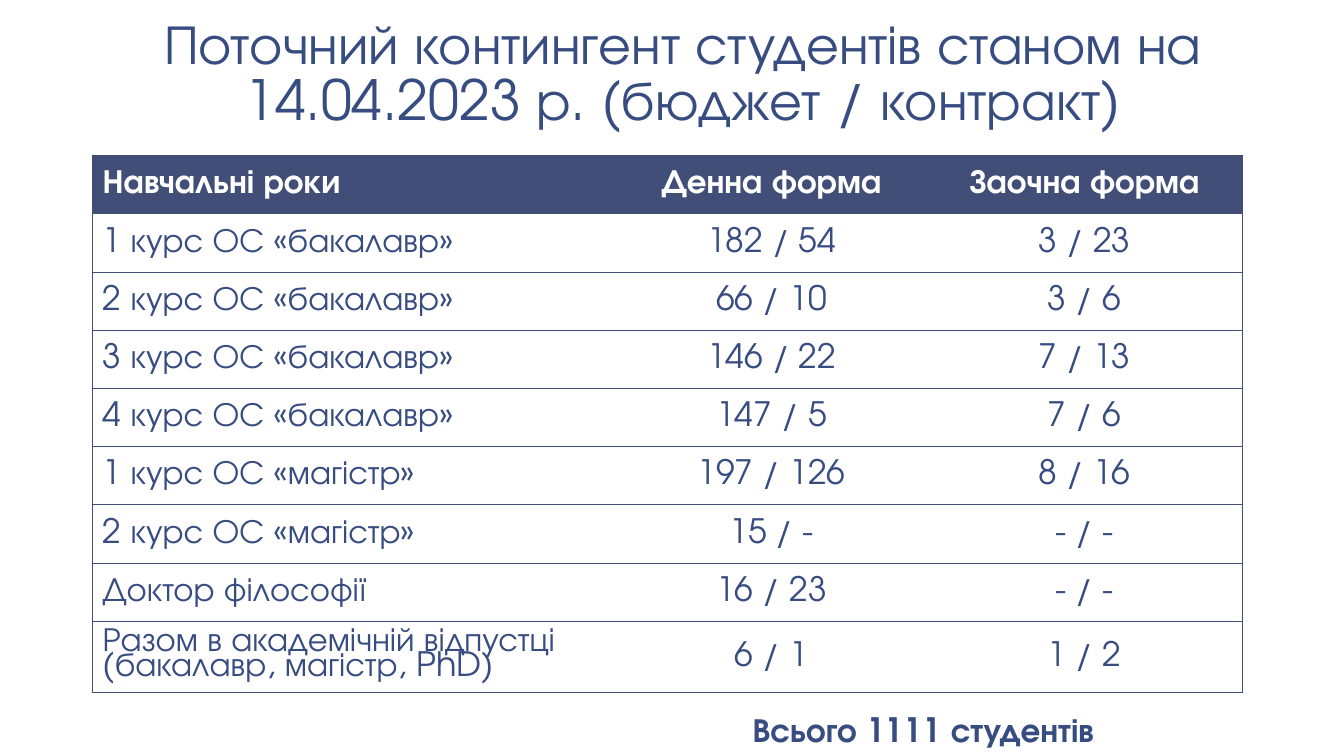
from dataclasses import dataclass

from lxml import etree
from pptx import Presentation
from pptx.dml.color import RGBColor
from pptx.enum.text import MSO_ANCHOR, MSO_AUTO_SIZE, PP_ALIGN
from pptx.oxml.ns import qn
from pptx.util import Pt

LEFT, CENTER = PP_ALIGN.LEFT, PP_ALIGN.CENTER
MIDDLE, BOTTOM = MSO_ANCHOR.MIDDLE, MSO_ANCHOR.BOTTOM
FIXED, GROW = MSO_AUTO_SIZE.NONE, MSO_AUTO_SIZE.SHAPE_TO_FIT_TEXT


@dataclass(frozen=True)
class Theme:
    """Colours, font and type sizes of the slide."""
    font: str = "TeX Gyre Adventor"
    ink: str = "374C81"
    head: str = "414E77"
    white: str = "FFFFFF"
    title: float = 39.6
    body: float = 24
    rule: float = 0.5


THEME = Theme()
TITLE = "Поточний контингент студентів станом на 14.04.2023 р. (бюджет / контракт)"
TOTAL = "Всього 1111 студентів"
ROWS = [
    ("Навчальні роки", "Денна форма", "Заочна форма"),
    ("1 курс ОС «бакалавр»", "182 / 54", "3 / 23"),
    ("2 курс ОС «бакалавр»", "66 / 10", "3 / 6"),
    ("3 курс ОС «бакалавр»", "146 / 22", "7 / 13"),
    ("4 курс ОС «бакалавр»", "147 / 5", "7 / 6"),
    ("1 курс ОС «магістр»", "197 / 126", "8 / 16"),
    ("2 курс ОС «магістр»", "15 / -", "- / -"),
    ("Доктор філософії", "16 / 23", "- / -"),
    ("Разом в академічній відпустці (бакалавр, магістр, PhD)", "6 / 1", "1 / 2"),
]
COLS = (374.4, 221, 226.1)
ROW, LAST = 41.6, 51


def write(frame, text, size, color, bold=False, align=LEFT, lead=None):
    """Put one styled run in the first paragraph of a frame."""
    para = frame.paragraphs[0]
    para.alignment = align
    if lead:
        para.line_spacing = lead
    run = para.add_run()
    run.text = text
    font = run.font
    font.name, font.size, font.bold = THEME.font, Pt(size), bold
    font.color.rgb = RGBColor.from_string(color)


def edge(cell, side, shown):
    """Draw or clear one border of a cell."""
    line = etree.SubElement(cell._tc.get_or_add_tcPr(), qn(f"a:ln{side}"))
    line.set("w", str(Pt(THEME.rule)))
    if shown:
        fill = etree.SubElement(line, qn("a:solidFill"))
        etree.SubElement(fill, qn("a:srgbClr")).set("val", THEME.head)
    else:
        etree.SubElement(line, qn("a:noFill"))


def add_title(slide, x, y, w, h):
    """Place the slide title in its placeholder."""
    title = slide.shapes.title
    title.left, title.top, title.width, title.height = map(Pt, (x, y, w, h))
    frame = title.text_frame
    frame.auto_size, frame.word_wrap = FIXED, True
    frame.vertical_anchor = BOTTOM
    frame.margin_left = frame.margin_right = Pt(9.4)
    frame.margin_top = frame.margin_bottom = Pt(5)
    write(frame, TITLE, THEME.title, THEME.ink, align=CENTER, lead=0.85)


def add_grid(slide, x, y):
    """Place the table of student counts."""
    high = ROW * (len(ROWS) - 1) + LAST
    grid = slide.shapes.add_table(
        len(ROWS), len(COLS), Pt(x), Pt(y), Pt(sum(COLS)), Pt(high)).table
    grid.first_row = grid.horz_banding = False
    for col, wide in zip(grid.columns, COLS):
        col.width = Pt(wide)
    for r, row in enumerate(ROWS):
        head, last = r == 0, r == len(ROWS) - 1
        grid.rows[r].height = Pt(LAST if last else ROW)
        for c, text in enumerate(row):
            cell = grid.cell(r, c)
            cell.vertical_anchor = MIDDLE
            edge(cell, "L", c == 0)
            edge(cell, "R", c == len(COLS) - 1)
            edge(cell, "T", True)
            edge(cell, "B", True)
            if head:
                cell.fill.solid()
                cell.fill.fore_color.rgb = RGBColor.from_string(THEME.head)
            else:
                cell.fill.background()
            write(cell.text_frame, text, THEME.body,
                  THEME.white if head else THEME.ink, head,
                  CENTER if c else LEFT, 0.8 if last and c == 0 else None)


def add_total(slide, x, y, w, h):
    """Place the line with the overall count."""
    frame = slide.shapes.add_textbox(*map(Pt, (x, y, w, h))).text_frame
    frame.word_wrap, frame.auto_size = True, GROW
    write(frame, TOTAL, THEME.body, THEME.ink, bold=True)


def main():
    """Build and save the deck."""
    deck = Presentation()
    deck.slide_width, deck.slide_height = Pt(960), Pt(540)
    slide = deck.slides.add_slide(deck.slide_layouts[5])
    add_title(slide, 87.8, 5.8, 800, 93.6)
    add_grid(slide, 66.2, 111)
    add_total(slide, 530.6, 502.6, 283.7, 36)
    deck.save("out.pptx")


if __name__ == "__main__":
    main()
